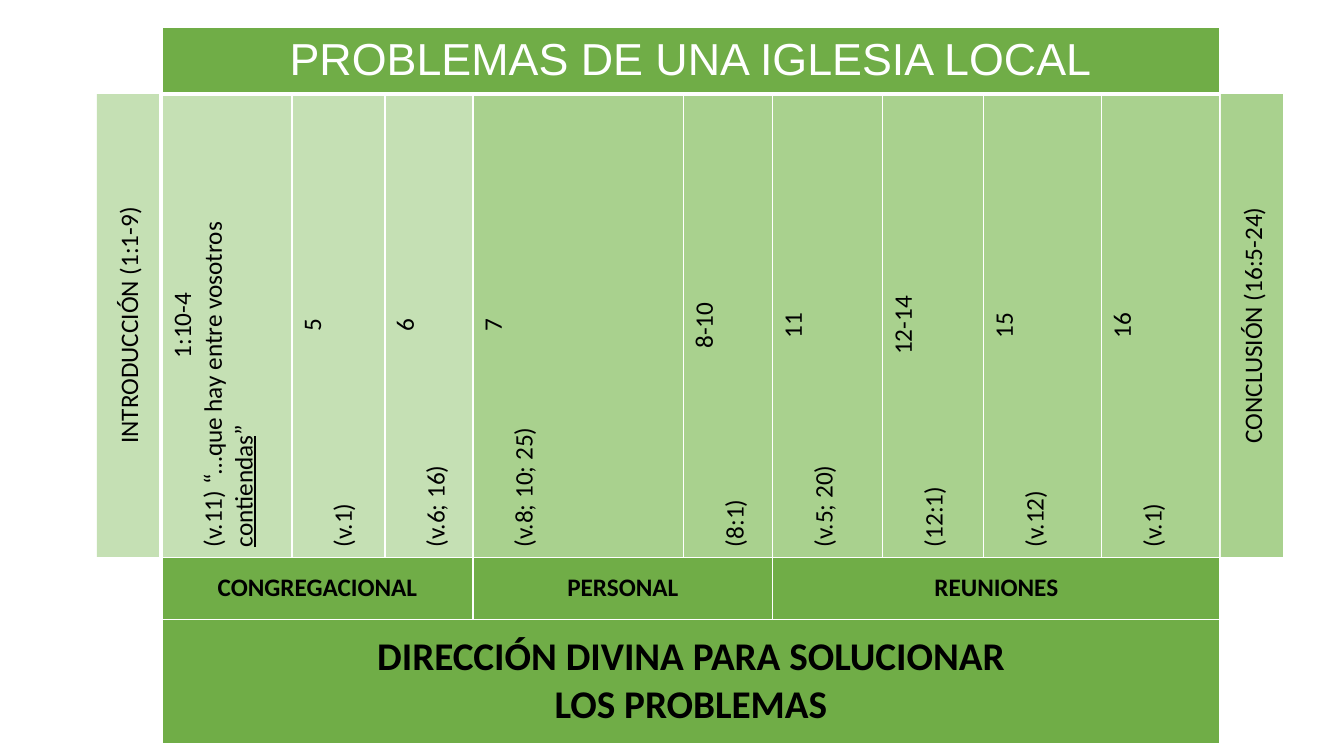
from pptx import Presentation
from pptx.dml.color import RGBColor
from pptx.enum.shapes import MSO_SHAPE
from pptx.enum.text import MSO_ANCHOR, PP_ALIGN
from pptx.oxml.ns import qn
from pptx.util import Pt
from lxml import etree

RECT = MSO_SHAPE.RECTANGLE
MID = MSO_ANCHOR.MIDDLE
TOP = MSO_ANCHOR.TOP
CENTER = PP_ALIGN.CENTER
LEFT = PP_ALIGN.LEFT

COLORS = {"dark": "70AD47", "mid": "A9D18E", "pale": "C5E0B4",
          "white": "FFFFFF", "black": "000000"}
TITLE = "PROBLEMAS DE UNA IGLESIA LOCAL"
GOAL = ["DIRECCIÓN DIVINA PARA SOLUCIONAR", "LOS PROBLEMAS"]
PARTS = [
    ("1:10-4", [("(v.11) “…que hay entre vosotros ", False),
                ("contiendas", True), ("”", False)], 130, "pale"),
    ("5", [("(v.1)", False)], 93, "pale"),
    ("6", [("(v.6; 16)", False)], 88, "pale"),
    ("7", [("(v.8; 10; 25)", False)], 211, "mid"),
    ("8-10", [("(8:1)", False)], 89, "mid"),
    ("11", [("(v.5; 20)", False)], 110, "mid"),
    ("12-14", [("(12:1)", False)], 101, "mid"),
    ("15", [("(v.12)", False)], 118, "mid"),
    ("16", [("(v.1)", False)], 118, "mid"),
]
GROUPS = [("CONGREGACIONAL", 3), ("PERSONAL", 2), ("REUNIONES", 4)]
SIDES = [("INTRODUCCIÓN (1:1-9)", 97, "pale"),
         ("CONCLUSIÓN (16:5-24)", 1221, "mid")]
ROWS = [67, 463, 62, 124]
X, Y = 162, 27
SIDE_W = 62
SCALE = 914400 / 100.8


def px(n):
    return round(n * SCALE)


def rgb(name):
    return RGBColor.from_string(COLORS[name])


def paint(item, name):
    item.fill.solid()
    item.fill.fore_color.rgb = rgb(name)


def write(frame, lines, size=18, font="Calibri", color="black",
          bold=False, aligns=()):
    for i, line in enumerate(lines):
        para = frame.paragraphs[0] if i == 0 else frame.add_paragraph()
        para.alignment = aligns[i] if aligns else CENTER
        runs = [(line, False)] if isinstance(line, str) else line
        for text, under in runs:
            run = para.add_run()
            run.text = text
            run.font.size = Pt(size)
            run.font.name = font
            run.font.bold = bold
            run.font.underline = under
            run.font.color.rgb = rgb(color)


def edge(cell, row):
    props = cell._tc.get_or_add_tcPr()
    widths = {"L": 1, "R": 1, "T": 3 if row == 1 else 1,
              "B": 3 if row == 0 else 1}
    for side, width in widths.items():
        line = etree.SubElement(props, qn("a:ln" + side), w=str(Pt(width)))
        fill = etree.SubElement(line, qn("a:solidFill"))
        etree.SubElement(fill, qn("a:srgbClr"), val=COLORS["white"])


def span(grid, row, col, count):
    cell = grid.cell(row, col)
    cell.merge(grid.cell(row, col + count - 1))
    cell.vertical_anchor = MID
    return cell.text_frame


def draw_grid(slide):
    count = len(PARTS)
    width = sum(part[2] for part in PARTS)
    grid = slide.shapes.add_table(len(ROWS), count, px(X), px(Y),
                                  px(width), px(sum(ROWS))).table
    grid.first_row = False
    grid.horz_banding = False
    for row, high in enumerate(ROWS):
        grid.rows[row].height = px(high)
        for col, part in enumerate(PARTS):
            cell = grid.cell(row, col)
            edge(cell, row)
            paint(cell, part[3] if row == 1 else "dark")
    for col, (head, verse, wide, _) in enumerate(PARTS):
        grid.columns[col].width = px(wide)
        cell = grid.cell(1, col)
        cell.vertical_anchor = TOP
        cell._tc.get_or_add_tcPr().set("vert", "vert270")
        write(cell.text_frame, [head, verse], aligns=[CENTER, LEFT])
    write(span(grid, 0, 0, count), [TITLE], size=32, font="Arial",
          color="white")
    col = 0
    for name, size in GROUPS:
        write(span(grid, 2, col, size), [name], bold=True)
        col += size
    write(span(grid, 3, 0, count), GOAL, size=28, bold=True)


def draw_side(slide, text, left, color):
    box = slide.shapes.add_shape(RECT, px(left), px(Y + ROWS[0]),
                                 px(SIDE_W), px(ROWS[1]))
    box.shadow.inherit = False
    paint(box, color)
    box.line.fill.background()
    frame = box.text_frame
    frame.word_wrap = True
    frame.vertical_anchor = MID
    box.element.txBody.bodyPr.set("vert", "vert270")
    write(frame, [text])


def main():
    deck = Presentation()
    deck.slide_width, deck.slide_height = px(1344), px(756)
    slide = deck.slides.add_slide(deck.slide_layouts[6])
    draw_grid(slide)
    for side in SIDES:
        draw_side(slide, *side)
    deck.save("out.pptx")


if __name__ == "__main__":
    main()
